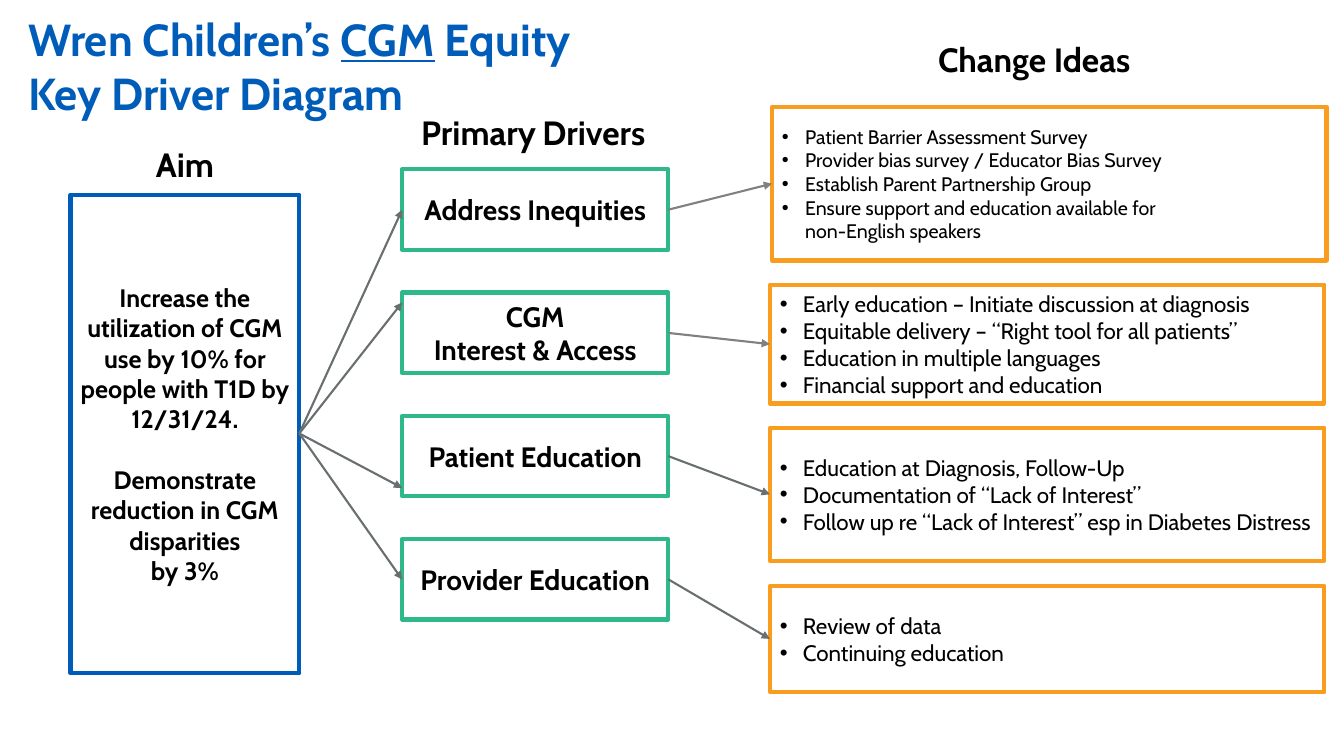
from lxml import etree
from pptx import Presentation
from pptx.dml.color import RGBColor
from pptx.enum.shapes import MSO_CONNECTOR, MSO_SHAPE
from pptx.enum.text import MSO_ANCHOR, PP_ALIGN
from pptx.oxml.ns import qn
from pptx.util import Pt

RECTANGLE = MSO_SHAPE.RECTANGLE
STRAIGHT = MSO_CONNECTOR.STRAIGHT
TOP, MIDDLE = MSO_ANCHOR.TOP, MSO_ANCHOR.MIDDLE
LEFT, CENTER = PP_ALIGN.LEFT, PP_ALIGN.CENTER

BLACK = RGBColor(0x00, 0x00, 0x00)
BLUE = RGBColor(0x00, 0x5C, 0xB9)
GREEN = RGBColor(0x2F, 0xB8, 0x8A)
ORANGE = RGBColor(0xF9, 0x9D, 0x20)
SLATE = RGBColor(0x69, 0x6F, 0x70)
GRAY = RGBColor(0x80, 0x80, 0x80)


class DriverDiagram:
    """Holds the text style and the slide being drawn."""

    font_name = "Cabin"
    bullet_indent = 16.5

    def __init__(self, page):
        self.page = page

    def fill_text(self, box, paragraphs, size, bold=True, color=BLACK,
                  align=CENTER, anchor=MIDDLE, gap=0, bulleted=False):
        """Each paragraph is a string or a list of (text, format) pairs."""
        frame = box.text_frame
        frame.word_wrap = True
        frame.vertical_anchor = anchor
        for index, content in enumerate(paragraphs):
            para = frame.paragraphs[0] if index == 0 else frame.add_paragraph()
            para.alignment = align
            if index and gap:
                para.space_before = Pt(gap)
            if bulleted:
                self.add_bullet(para)
            pairs = [(content, {})] if isinstance(content, str) else content
            for text, changes in pairs:
                values = {"name": self.font_name, "size": Pt(size), "bold": bold, **changes}
                for row, line in enumerate(text.split("\n")):
                    if row:
                        para.add_line_break()
                    span = para.add_run()
                    span.text = line
                    for name, value in values.items():
                        setattr(span.font, name, value)
                    span.font.color.rgb = color

    def add_bullet(self, para):
        properties = para._p.get_or_add_pPr()
        properties.set("marL", str(Pt(self.bullet_indent)))
        properties.set("indent", str(-Pt(self.bullet_indent)))
        etree.SubElement(properties, qn("a:buFont"), typeface="Arial")
        etree.SubElement(properties, qn("a:buChar"), char="•")

    def label(self, place, content, size=24, **style):
        box = self.page.shapes.add_textbox(*map(Pt, place))
        self.fill_text(box, [content], size, anchor=TOP, **style)
        return box

    def frame(self, place, border, paragraphs, size, **style):
        box = self.page.shapes.add_shape(RECTANGLE, *map(Pt, place))
        box.shadow.inherit = False
        box.fill.background()
        box.line.color.rgb = border
        box.line.width = Pt(3)
        self.fill_text(box, paragraphs, size, **style)

    def arrow(self, start, end, color):
        link = self.page.shapes.add_connector(STRAIGHT, *map(Pt, (*start, *end)))
        link.line.color.rgb = color
        link.line.width = Pt(1.5)
        etree.SubElement(link.line._get_or_add_ln(), qn("a:tailEnd"), type="triangle")
        etree.SubElement(link._element.spPr, qn("a:effectLst"))


# Layout: aim on the left, drivers in even steps, ideas on the right
AIM_PLACE = (50.4, 139, 163.4, 342)
AIM_EXIT = (213.8, 309.6)
DRIVER_LEFT, DRIVER_TOP, DRIVER_STEP = 287.3, 121, 88
DRIVER_WIDTH, DRIVER_HEIGHT = 190, 57.6
IDEA_WIDTH = 396

# Driver, height where the aim arrow lands, arrow colour,
# idea box (left, top, height, text size), ideas
ROWS = [
    ("Address Inequities", 149.8, GRAY, (551.5, 76.3, 109.8, 14), [
        "Patient Barrier Assessment Survey",
        "Provider bias survey / Educator Bias Survey",
        "Establish Parent Partnership Group",
        "Ensure support and education available for\nnon-English speakers"]),
    ("CGM\nInterest & Access", 216, GRAY, (550, 203.3, 85, 16), [
        "Early education – Initiate discussion at diagnosis",
        "Equitable delivery – “Right tool for all patients”",
        "Education in multiple languages",
        "Financial support and education"]),
    ("Patient Education", 348.5, SLATE, (550, 305.5, 95.2, 16), [
        "Education at Diagnosis, Follow-Up",
        "Documentation of “Lack of Interest”",
        "Follow up re “Lack of Interest” esp in Diabetes Distress"]),
    ("Provider Education", 414, SLATE, (550, 418.5, 75.8, 16), [
        "Review of data",
        "Continuing education"]),
]


def main():
    deck = Presentation()
    deck.slide_width, deck.slide_height = Pt(960), Pt(540)
    diagram = DriverDiagram(deck.slides.add_slide(deck.slide_layouts[6]))

    # Title
    title = diagram.label((20.2, 8.5, 490, 73), [
        ("Wren Children’s ", {}),
        ("CGM", {"underline": True}),
        (" Equity\nKey Driver Diagram", {})], size=32, color=BLUE, align=LEFT)
    for side in ("left", "right", "top", "bottom"):
        setattr(title.text_frame, f"margin_{side}", 0)

    # Column headings
    diagram.label((87.8, 99.4, 88.6, 36), "Aim")
    diagram.label((284.4, 76.3, 193, 36), [
        ("Primary", {}),
        (" ", {"name": "Montserrat", "size": Pt(18), "bold": False}),
        ("Drivers", {})])
    diagram.label((540.7, 24.5, 396, 36), "Change Ideas")

    # Aim
    diagram.frame(AIM_PLACE, BLUE, [
        "Increase the utilization of CGM use by 10% for people with T1D by 12/31/24.",
        "Demonstrate reduction in CGM disparities\nby 3%"], 18, gap=22)

    # Drivers, their change ideas and the arrows between them
    for index, (driver, landing, color, idea_box, ideas) in enumerate(ROWS):
        top = DRIVER_TOP + index * DRIVER_STEP
        left, idea_top, height, size = idea_box
        diagram.frame((DRIVER_LEFT, top, DRIVER_WIDTH, DRIVER_HEIGHT), GREEN, [driver], 20)
        diagram.frame((left, idea_top, IDEA_WIDTH, height), ORANGE, ideas, size,
                      bold=False, align=LEFT, bulleted=True)
        diagram.arrow(AIM_EXIT, (DRIVER_LEFT, landing), SLATE)
        diagram.arrow((DRIVER_LEFT + DRIVER_WIDTH, top + DRIVER_HEIGHT / 2),
                      (left, idea_top + height / 2), color)

    deck.save("out.pptx")


if __name__ == "__main__":
    main()
